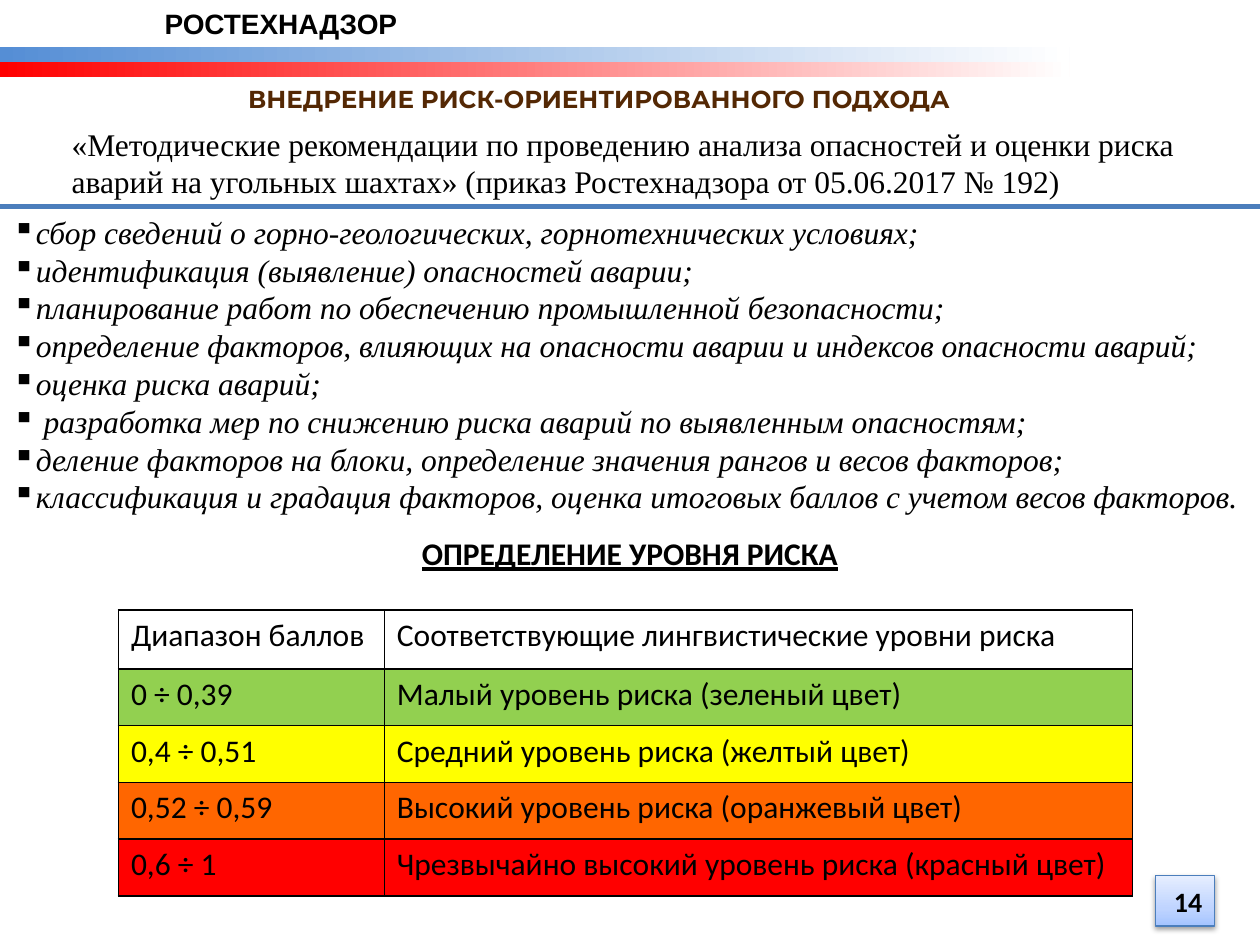
from lxml.etree import SubElement
from pptx import Presentation
from pptx.dml.color import RGBColor
from pptx.enum.shapes import MSO_CONNECTOR as Connector, MSO_SHAPE as Shape
from pptx.enum.text import MSO_ANCHOR as Anchor, PP_ALIGN as Align
from pptx.oxml.ns import qn
from pptx.util import Inches, Pt

THEME = {
    "text": "000000", "title": "542804", "line": "4B7EBC",
    "agency": dict(name="Arial", size=16, bold=True),
    "heading": dict(name="Montserrat", size=14, bold=True, color="542804"),
    "body": dict(name="Times New Roman", size=18),
    "step": dict(name="Times New Roman", size=18, italic=True),
    "table_title": dict(name="Calibri", size=18, bold=True, underline=True),
    "cell": dict(name="Calibri", size=18),
    "number": dict(name="Calibri", size=16, bold=True),
}
STRIPES = ["558ED5", "FF0000"]
BADGE_STOPS = [(0, "A4C4FF"), (35, "BFD4FF"), (100, "E6EEFF")]

# text, left, top, width, height, style, alignment
HEADERS = [
    ("РОСТЕХНАДЗОР", 0.22, 0, 4.02, 0.29, "agency", Align.CENTER),
    ("ВНЕДРЕНИЕ РИСК-ОРИЕНТИРОВАННОГО ПОДХОДА",
     1.87, 0.62, 6.48, 0.34, "heading", Align.LEFT),
    ("«Методические рекомендации по проведению анализа опасностей и оценки "
     "риска аварий на угольных шахтах» (приказ Ростехнадзора от 05.06.2017 № 192)",
     0.47, 0.94, 9.3, 0.71, "body", Align.LEFT),
]
STEPS = [
    "сбор сведений о горно-геологических, горнотехнических условиях;",
    "идентификация (выявление) опасностей аварии;",
    "планирование работ по обеспечению промышленной безопасности;",
    "определение факторов, влияющих на опасности аварии и индексов опасности аварий;",
    "оценка риска аварий;",
    " разработка мер по снижению риска аварий по выявленным опасностям;",
    "деление факторов на блоки, определение значения рангов и весов факторов;",
    "классификация и градация факторов, оценка итоговых баллов с учетом весов факторов.",
]
TABLE_TITLE = "ОПРЕДЕЛЕНИЕ УРОВНЯ РИСКА"
RISK_LEVELS = [
    ("Диапазон баллов", "Соответствующие лингвистические уровни риска", None),
    ("0 ÷ 0,39", "Малый уровень риска (зеленый цвет)", "92D050"),
    ("0,4 ÷ 0,51", "Средний уровень риска (желтый цвет)", "FFFF00"),
    ("0,52 ÷ 0,59", "Высокий уровень риска (оранжевый цвет)", "FF6600"),
    ("0,6 ÷ 1", "Чрезвычайно высокий уровень риска (красный цвет)", "FF0000"),
]
COLUMN_WIDTHS = [2.11, 5.94]
ROW_HEIGHTS = [0.47] + [0.45] * 4


def box(*lengths):
    return [Inches(length) for length in lengths]


def add_color(parent, color):
    return SubElement(parent, qn("a:srgbClr"), val=color)


def write(paragraph, text, style, alignment=Align.LEFT):
    paragraph.text = text
    paragraph.alignment = alignment
    values = {"color": THEME["text"], **THEME[style]}
    paragraph.font.color.rgb = RGBColor.from_string(values.pop("color"))
    values["size"] = Pt(values["size"])
    for name, value in values.items():
        setattr(paragraph.font, name, value)


def add_text_frame(slide, *lengths):
    frame = slide.shapes.add_textbox(*box(*lengths)).text_frame
    frame.word_wrap = True
    return frame


def add_gradient_rectangle(slide, lengths, stops, angle):
    shape = slide.shapes.add_shape(Shape.RECTANGLE, *box(*lengths))
    shape.shadow.inherit = False
    shape.line.fill.background()
    shape.fill.gradient()
    shape.fill.gradient_angle = angle
    stop_list = shape._element.spPr.find(".//" + qn("a:gsLst"))
    for stop in list(stop_list):
        stop_list.remove(stop)
    for position, color in stops:
        add_color(SubElement(stop_list, qn("a:gs"), pos=str(position * 1000)), color)
    return shape


def add_steps(slide):
    frame = add_text_frame(slide, 0, 1.64, 10, 4.49)
    for index, step in enumerate(STEPS):
        paragraph = frame.add_paragraph() if index else frame.paragraphs[0]
        SubElement(paragraph._p.get_or_add_pPr(), qn("a:buChar"), char="▪")
        write(paragraph, step, "step")
    title = frame.add_paragraph()
    write(title, TABLE_TITLE, "table_title", Align.CENTER)
    title.line_spacing = 1.5


def add_borders(cell):
    properties = cell._tc.get_or_add_tcPr()
    for index, side in enumerate(("a:lnL", "a:lnR", "a:lnT", "a:lnB")):
        border = SubElement(properties, qn(side), w=str(Pt(1)))
        add_color(SubElement(border, qn("a:solidFill")), THEME["text"])
        properties.insert(index, border)


def add_risk_table(slide):
    table = slide.shapes.add_table(
        len(RISK_LEVELS), len(COLUMN_WIDTHS),
        *box(0.94, 4.84, sum(COLUMN_WIDTHS), sum(ROW_HEIGHTS))).table
    for column, width in zip(table.columns, COLUMN_WIDTHS):
        column.width = Inches(width)
    for row, height, (*texts, color) in zip(table.rows, ROW_HEIGHTS, RISK_LEVELS):
        row.height = Inches(height)
        for cell, text in zip(row.cells, texts):
            write(cell.text_frame.paragraphs[0], text, "cell")
            if color:
                cell.fill.solid()
                cell.fill.fore_color.rgb = RGBColor.from_string(color)
            else:
                cell.fill.background()
            add_borders(cell)


def add_page_number(slide, number):
    badge = add_gradient_rectangle(slide, (9.17, 6.95, 0.47, 0.4), BADGE_STOPS, 90)
    badge.line.color.rgb = RGBColor.from_string(THEME["line"])
    badge.line.width = Pt(0.75)
    shadow = SubElement(badge._element.spPr.find(qn("a:effectLst")), qn("a:outerShdw"),
                        blurRad=str(Pt(3.1)), dist=str(Pt(1.6)), dir="5400000")
    SubElement(add_color(shadow, "000000"), qn("a:alpha"), val="38000")
    badge.text_frame.vertical_anchor = Anchor.MIDDLE
    write(badge.text_frame.paragraphs[0], number, "number", Align.RIGHT)


def add_divider(slide):
    line = slide.shapes.add_connector(Connector.STRAIGHT, *box(0, 1.64, 10, 1.64))
    line.line.color.rgb = RGBColor.from_string(THEME["line"])
    line.line.width = Pt(3)
    SubElement(line._element.spPr, qn("a:effectLst"))


def main():
    presentation = Presentation()
    presentation.slide_width, presentation.slide_height = box(10, 7.5)
    slide = presentation.slides.add_slide(presentation.slide_layouts[6])
    for index, color in enumerate(STRIPES):
        add_gradient_rectangle(slide, (0, 0.37 + index * 0.12, 8.49, 0.12),
                               [(0, color), (100, "FFFFFF")], 0)
    for text, left, top, width, height, style, alignment in HEADERS:
        frame = add_text_frame(slide, left, top, width, height)
        write(frame.paragraphs[0], text, style, alignment)
    add_page_number(slide, "14")
    add_risk_table(slide)
    add_steps(slide)
    add_divider(slide)
    presentation.save("out.pptx")


if __name__ == "__main__":
    main()
